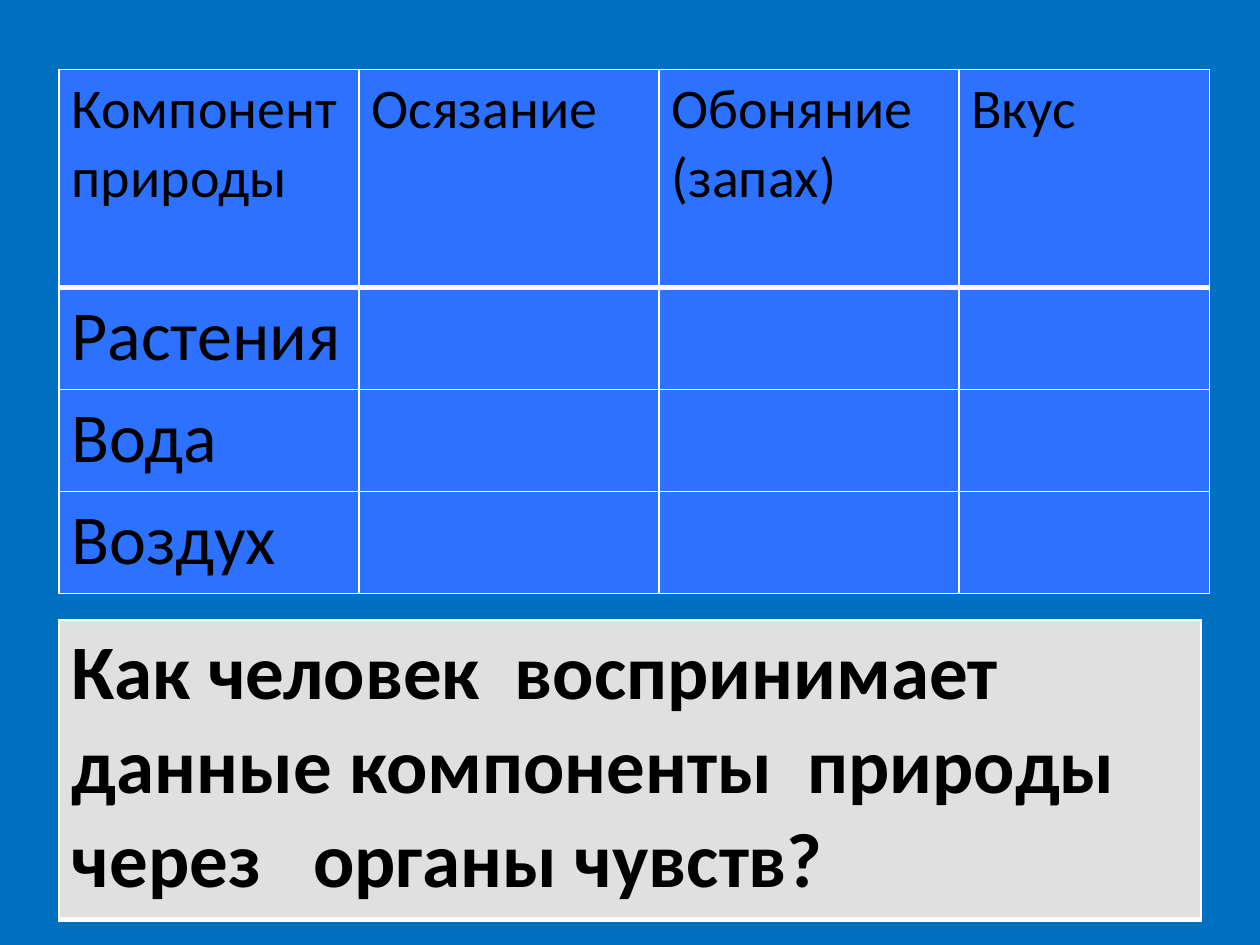
from dataclasses import dataclass

from lxml.etree import SubElement
from pptx import Presentation
from pptx.dml.color import RGBColor
from pptx.oxml.ns import qn
from pptx.util import Inches, Pt


@dataclass(frozen=True)
class Theme:
    font: str = "Calibri"
    background: str = "0070C0"
    grid_fill: str = "2C71FF"
    question_fill: str = "E0E0E0"
    text: str = "000000"
    border: str = "FFFFFF"
    header_size: int = 32
    label_size: int = 40
    question_size: int = 44
    thin: float = 1
    thick: float = 3


@dataclass(frozen=True)
class TableSpec:
    top: float
    columns: tuple[float, ...]
    heights: tuple[float, ...]
    rows: tuple[tuple[str, ...], ...]
    fill: str
    header_size: int
    label_size: int
    bold: bool = False


THEME = Theme()
LEFT = 0.47

SENSES = TableSpec(
    top=0.55,
    columns=(2.38, 2.38, 2.38, 1.99),
    heights=(1.73, 0.81, 0.81, 0.81),
    rows=(
        ("Компонент природы", "Осязание", "Обоняние (запах)", "Вкус"),
        ("Растения", "", "", ""),
        ("Вода", "", "", ""),
        ("Воздух", "", "", ""),
    ),
    fill=THEME.grid_fill,
    header_size=THEME.header_size,
    label_size=THEME.label_size,
)

QUESTION = TableSpec(
    top=4.92,
    columns=(9.06,),
    heights=(2.38,),
    rows=(("Как человек  воспринимает данные компоненты  природы  через   органы чувств?",),),
    fill=THEME.question_fill,
    header_size=THEME.question_size,
    label_size=THEME.question_size,
    bold=True,
)


def draw_borders(cell, top: float, bottom: float) -> None:
    properties = cell._tc.get_or_add_tcPr()
    widths = {"a:lnL": THEME.thin, "a:lnR": THEME.thin, "a:lnT": top, "a:lnB": bottom}
    for tag, width in widths.items():
        line = SubElement(properties, qn(tag), w=str(Pt(width)))
        SubElement(SubElement(line, qn("a:solidFill")), qn("a:srgbClr"), val=THEME.border)


def format_cell(cell, text: str, fill: str, size: int, bold: bool) -> None:
    cell.fill.solid()
    cell.fill.fore_color.rgb = RGBColor.from_string(fill)
    cell.text_frame.text = text
    font = cell.text_frame.paragraphs[0].font
    for span in cell.text_frame.paragraphs[0].runs:
        font = span.font
    font.name = THEME.font
    font.size = Pt(size)
    font.bold = bold
    font.color.rgb = RGBColor.from_string(THEME.text)


def draw_table(page, spec: TableSpec) -> None:
    frame = page.shapes.add_table(
        len(spec.rows), len(spec.columns), Inches(LEFT), Inches(spec.top),
        Inches(sum(spec.columns)), Inches(sum(spec.heights)),
    )
    table = frame.table
    for column, width in zip(table.columns, spec.columns):
        column.width = Inches(width)
    for index, (height, texts) in enumerate(zip(spec.heights, spec.rows)):
        table.rows[index].height = Inches(height)
        size = spec.header_size if index == 0 else spec.label_size
        top = THEME.thick if index == 1 else THEME.thin
        bottom = THEME.thick if index == 0 else THEME.thin
        for cell, text in zip(table.rows[index].cells, texts):
            draw_borders(cell, top, bottom)
            format_cell(cell, text, spec.fill, size, spec.bold)


def main() -> None:
    deck = Presentation()
    deck.slide_width = Inches(10)
    deck.slide_height = Inches(7.5)
    page = deck.slides.add_slide(deck.slide_layouts[6])
    page.background.fill.solid()
    page.background.fill.fore_color.rgb = RGBColor.from_string(THEME.background)
    for spec in (SENSES, QUESTION):
        draw_table(page, spec)
    deck.save("out.pptx")


if __name__ == "__main__":
    main()
